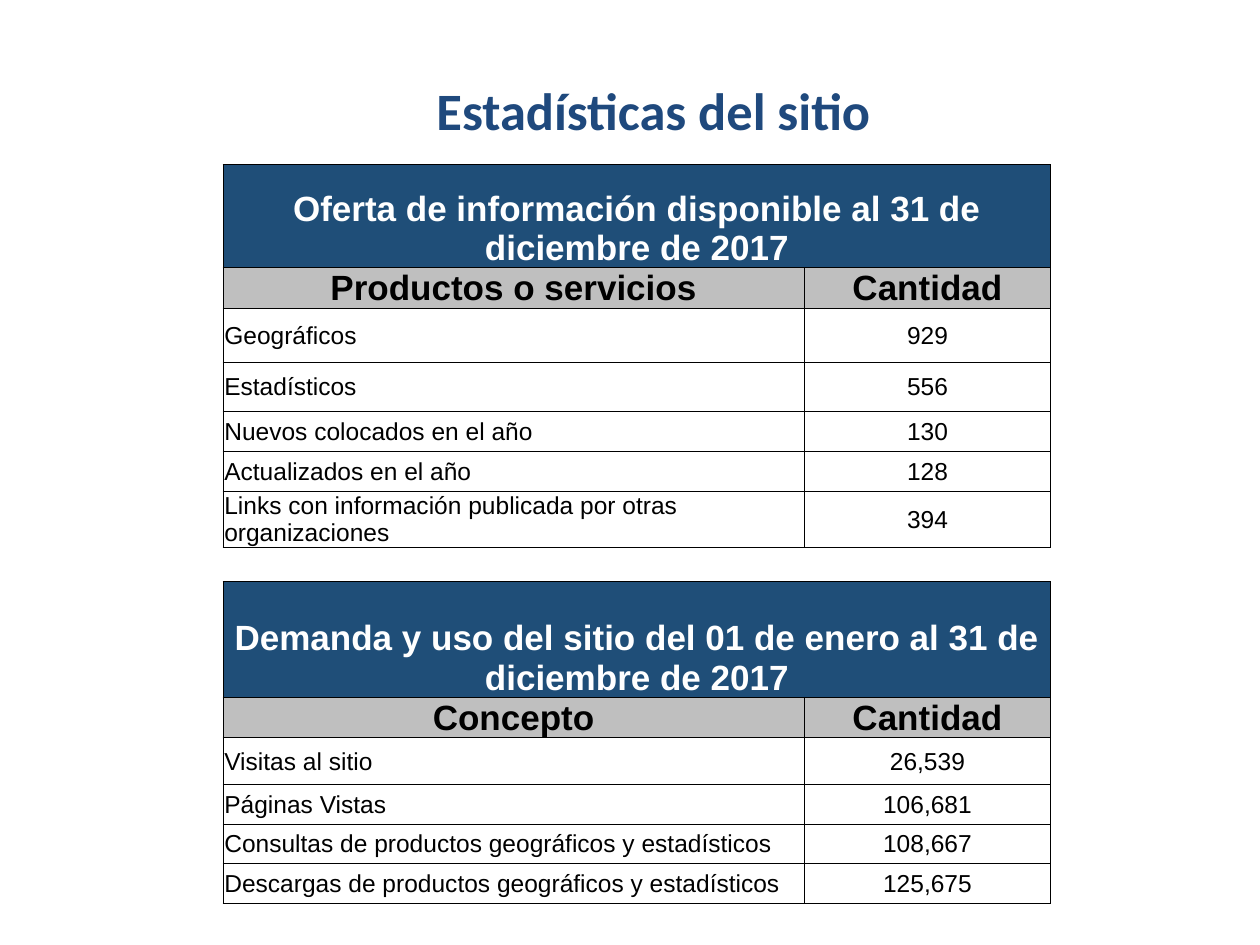
import pptx
import pptx.dml.color
import pptx.enum.text
import pptx.oxml.ns
import pptx.util
from lxml import etree

Pt = pptx.util.Pt
ALIGN = pptx.enum.text.PP_ALIGN
ANCHOR = pptx.enum.text.MSO_ANCHOR

COLORS = {
    "title": "1F497D",
    "banner": "1F4E78",
    "header": "BFBFBF",
    "border": "000000",
    "dark": "000000",
    "light": "FFFFFF",
}
LEFT = 127.5
COL_WIDTHS = (332, 141)

OFFER = [
    ("Productos o servicios", "Cantidad"),
    ("Geográficos", "929"),
    ("Estadísticos", "556"),
    ("Nuevos colocados en el año", "130"),
    ("Actualizados en el año", "128"),
    ("Links con información publicada por otras organizaciones", "394"),
]
DEMAND = [
    ("Concepto", "Cantidad"),
    ("Visitas al sitio", "26,539"),
    ("Páginas Vistas", "106,681"),
    ("Consultas de productos geográficos y estadísticos", "108,667"),
    ("Descargas de productos geográficos y estadísticos", "125,675"),
]


def rgb(name):
    return pptx.dml.color.RGBColor.from_string(COLORS[name])


def format_text(tf, font, size, color, bold, align):
    for p in tf.paragraphs:
        p.alignment = align
        for r in p.runs:
            r.font.name = font
            r.font.size = Pt(size)
            r.font.bold = bold
            r.font.color.rgb = rgb(color)


def add_borders(cell):
    qn = pptx.oxml.ns.qn
    tcPr = cell._tc.get_or_add_tcPr()
    for side in ("lnL", "lnR", "lnT", "lnB"):
        ln = etree.SubElement(tcPr, qn("a:" + side), w=str(Pt(0.5)))
        fill = etree.SubElement(ln, qn("a:solidFill"))
        etree.SubElement(fill, qn("a:srgbClr"), val=COLORS["border"])


def format_cell(cell, size, color, bold, align, fill=None, anchor=ANCHOR.MIDDLE):
    cell.margin_left = cell.margin_right = cell.margin_top = Pt(0.7)
    cell.margin_bottom = 0
    cell.vertical_anchor = anchor
    add_borders(cell)
    if fill:
        cell.fill.solid()
        cell.fill.fore_color.rgb = rgb(fill)
    else:
        cell.fill.background()
    format_text(cell.text_frame, "Arial", size, color, bold, align)


def add_title(s, text):
    sp = s.shapes.title
    sp.left, sp.top, sp.width, sp.height = Pt(61.5), Pt(37.5), Pt(624), Pt(50)
    sp.text_frame.text = text
    sp.text_frame.vertical_anchor = ANCHOR.MIDDLE
    format_text(sp.text_frame, "Calibri", 30, "title", True, ALIGN.CENTER)


def add_stats_table(s, top, banner, rows, heights):
    shape = s.shapes.add_table(len(rows) + 1, 2, Pt(LEFT), Pt(top),
                               Pt(sum(COL_WIDTHS)), Pt(sum(heights)))
    table = shape.table
    for col, width in zip(table.columns, COL_WIDTHS):
        col.width = Pt(width)
    for row, height in zip(table.rows, heights):
        row.height = Pt(height)

    # Banner across both columns
    table.cell(0, 0).merge(table.cell(0, 1))
    table.cell(0, 0).text_frame.text = banner
    for cell in table.rows[0].cells:
        format_cell(cell, 20, "light", True, ALIGN.CENTER, "banner", ANCHOR.BOTTOM)

    # Column headings, then data
    for i, values in enumerate(rows, 1):
        for j, value in enumerate(values):
            cell = table.cell(i, j)
            cell.text_frame.text = value
            if i == 1:
                format_cell(cell, 20, "dark", True, ALIGN.CENTER, "header")
            else:
                align = ALIGN.CENTER if j else ALIGN.LEFT
                format_cell(cell, 14, "dark", False, align)


def main():
    prs = pptx.Presentation()
    prs.slide_width, prs.slide_height = Pt(720), Pt(540)
    s = prs.slides.add_slide(prs.slide_layouts[5])
    add_title(s, "Estadísticas del sitio")
    add_stats_table(s, 94, "Oferta de información disponible al 31 de diciembre de 2017",
                    OFFER, (59, 22.8, 31, 28, 22.8, 22.8, 32))
    add_stats_table(s, 332.3, "Demanda y uso del sitio del 01 de enero al 31 de diciembre de 2017",
                    DEMAND, (66.2, 22.8, 26.8, 22.6, 22.6, 22.6))
    prs.save("out.pptx")


if __name__ == "__main__":
    main()
